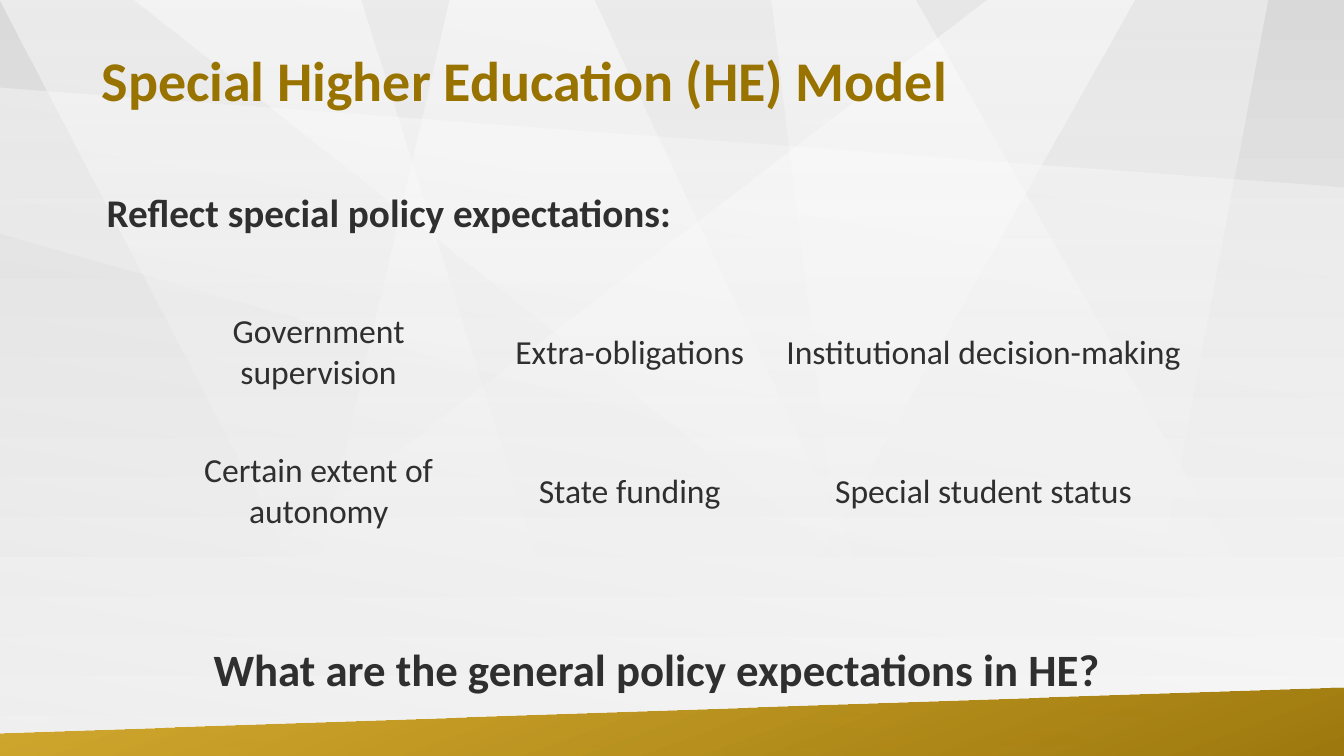
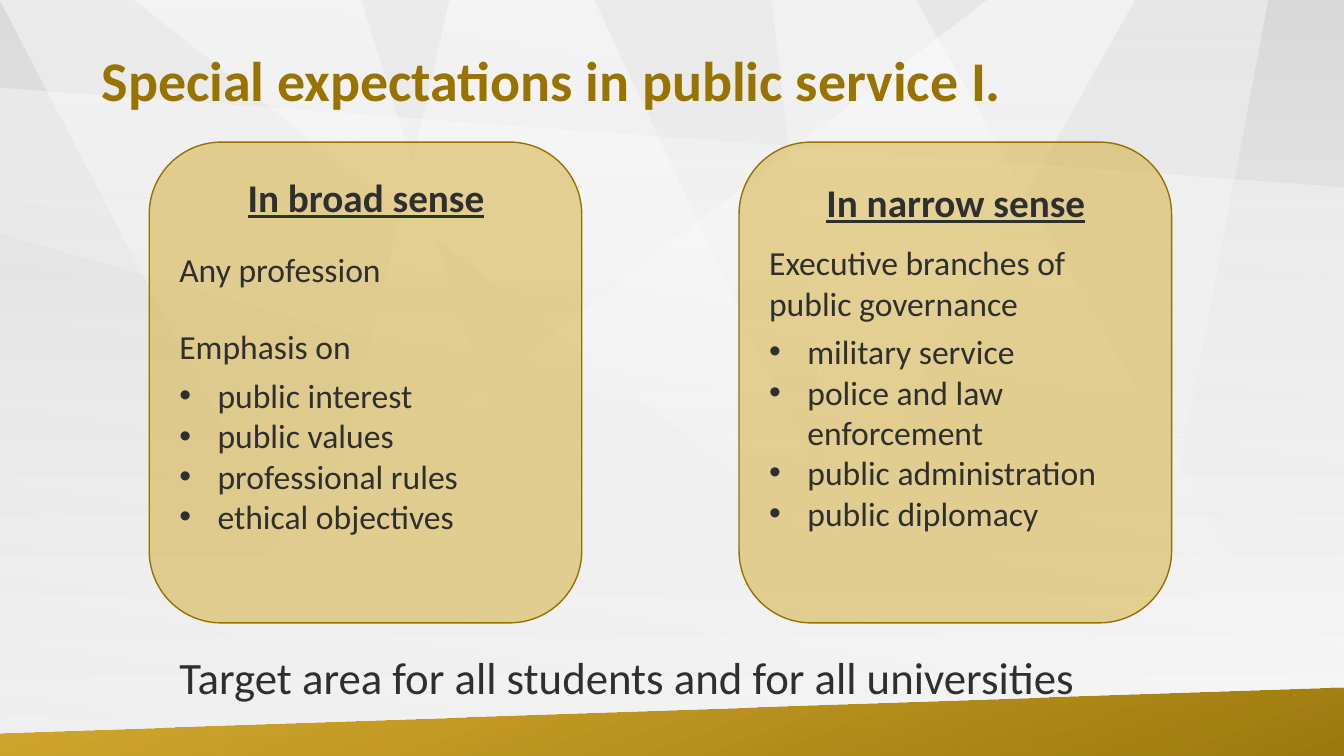
from dataclasses import dataclass
from typing import Optional

from lxml import etree
from pptx import Presentation
from pptx.dml.color import RGBColor
from pptx.enum.shapes import MSO_SHAPE
from pptx.enum.text import MSO_ANCHOR, PP_ALIGN
from pptx.oxml.ns import qn
from pptx.util import Pt

PX = 9144
WIDTH, HEIGHT = 1333, 750
FONT = "Calibri"
BLANK_LAYOUT = 6
NO_GRID_STYLE = "{2D5ABB26-0587-4C30-8999-92F81FD0307C}"

RECTANGLE = MSO_SHAPE.RECTANGLE
ROUNDED = MSO_SHAPE.ROUNDED_RECTANGLE
TOP, MIDDLE = MSO_ANCHOR.TOP, MSO_ANCHOR.MIDDLE
LEFT, CENTER = PP_ALIGN.LEFT, PP_ALIGN.CENTER

WHITE = RGBColor(0xFF, 0xFF, 0xFF)
PALE_GREY = RGBColor(0xD9, 0xD9, 0xD9)
GREY = RGBColor(0xBF, 0xBF, 0xBF)
INK = RGBColor(0x2F, 0x2F, 0x2F)
GOLD = RGBColor(0xCC, 0x99, 0x00)
DARK_GOLD = RGBColor(0x99, 0x72, 0x00)
TITLE_GOLD = RGBColor(0x99, 0x73, 0x00)
BORDER_GOLD = RGBColor(0x97, 0x71, 0x00)


@dataclass(frozen=True)
class Gradient:
    start: RGBColor
    start_alpha: int
    end: RGBColor
    end_alpha: int
    angle: int = 90


@dataclass(frozen=True)
class Facet:
    points: tuple[tuple[int, int], ...]
    gradient: Gradient


@dataclass(frozen=True)
class Line:
    text: str
    size: int = 24
    bold: bool = False
    underline: bool = False
    color: RGBColor = INK
    align: PP_ALIGN = LEFT
    spacing: Optional[float] = None
    before: int = 0
    after: int = 0
    bullet: bool = False


@dataclass(frozen=True)
class Panel:
    left: int
    text_top: int
    lines: tuple[Line, ...]


BACKGROUND = Gradient(PALE_GREY, 50, WHITE, 100)
BRIGHT = Gradient(WHITE, 50, WHITE, 0)
SOFT = Gradient(WHITE, 40, WHITE, 0)
SHADE = Gradient(GREY, 25, WHITE, 0, 280)
BAND = Facet(((0, 727), (1333, 682), (1333, 750), (0, 750)),
             Gradient(GOLD, 80, DARK_GOLD, 95, 70))
FACETS = (
    Facet(((979, 0), (0, 750), (701, 750), (1125, 0)), BRIGHT),
    Facet(((0, 0), (358, 0), (594, 750), (391, 750)), BRIGHT),
    Facet(((132, 0), (907, 0), (1333, 750), (1083, 750)), BRIGHT),
    Facet(((765, 0), (856, 750), (1115, 750), (1257, 0)), SOFT),
    Facet(((589, 0), (446, 0), (272, 750), (939, 750)), BRIGHT),
    Facet(((0, 87), (1333, 186), (1333, 610), (0, 232)), SOFT),
)

EXPECTATIONS = (
    ("Government supervision", "Extra-obligations", "Institutional decision-making"),
    ("Certain extent of autonomy", "State funding", "Special student status"),
)
COLUMN_WIDTHS = (334, 283, 419)
ROW_HEIGHT = 138


def heading(text: str) -> Line:
    return Line(text, 28, bold=True, underline=True, align=CENTER)


def bullets(*texts: str) -> tuple[Line, ...]:
    return tuple(Line(text, bullet=True) for text in texts)


PANELS = (
    Panel(148, 167, (
        heading("In broad sense"),
        Line("Any profession", spacing=1.5, before=6, after=6),
        Line("Emphasis on", spacing=1.5, before=6, after=6),
        *bullets("public interest", "public values", "professional rules",
                 "ethical objectives"),
    )),
    Panel(733, 172, (
        Line("In narrow sense", 28, bold=True, underline=True, align=CENTER, after=6),
        Line("Executive branches of public governance", before=6, after=6),
        *bullets("military service", "police and law enforcement",
                 "public administration", "public diplomacy"),
    )),
)


def add_alpha(color_element, percent: int) -> None:
    etree.SubElement(color_element, qn("a:alpha"), val=str(percent * 1000))


def paint_gradient(fill, root, gradient: Gradient) -> None:
    fill.gradient()
    element = next(root.iter(qn("a:gradFill")))
    for child in list(element):
        element.remove(child)
    stops = etree.SubElement(element, qn("a:gsLst"))
    for position, color, alpha in ((0, gradient.start, gradient.start_alpha),
                                   (100000, gradient.end, gradient.end_alpha)):
        stop = etree.SubElement(stops, qn("a:gs"), pos=str(position))
        add_alpha(etree.SubElement(stop, qn("a:srgbClr"), val=str(color)), alpha)
    etree.SubElement(element, qn("a:lin"), ang=str(gradient.angle * 60000), scaled="0")


def finish_gradient_shape(shape, gradient: Gradient) -> None:
    shape.shadow.inherit = False
    shape.line.fill.background()
    paint_gradient(shape.fill, shape.element.spPr, gradient)


def add_facet(page, facet: Facet) -> None:
    builder = page.shapes.build_freeform(*facet.points[0], scale=PX)
    builder.add_line_segments(facet.points[1:], close=True)
    finish_gradient_shape(builder.convert_to_shape(), facet.gradient)


def write_line(paragraph, line: Line) -> None:
    paragraph.text = line.text
    paragraph.alignment = line.align
    if line.spacing:
        paragraph.line_spacing = line.spacing
    paragraph.space_before = Pt(line.before)
    paragraph.space_after = Pt(line.after)
    if line.bullet:
        properties = paragraph._p.get_or_add_pPr()
        properties.set("marL", str(38 * PX))
        properties.set("indent", str(-38 * PX))
        etree.SubElement(properties, qn("a:buFont"), typeface="Arial")
        etree.SubElement(properties, qn("a:buChar"), char="•")
    for span in paragraph.runs:
        span.font.name = FONT
        span.font.size = Pt(line.size)
        span.font.bold = line.bold
        span.font.underline = line.underline
        span.font.color.rgb = line.color


def add_text(page, left: int, top: int, width: int, height: int,
             *lines: Line, anchor: MSO_ANCHOR = TOP) -> None:
    box = page.shapes.add_textbox(left * PX, top * PX, width * PX, height * PX)
    frame = box.text_frame
    frame.word_wrap = True
    frame.vertical_anchor = anchor
    for index, line in enumerate(lines):
        paragraph = frame.add_paragraph() if index else frame.paragraphs[0]
        write_line(paragraph, line)


def add_page(deck, title: str):
    page = deck.slides.add_slide(deck.slide_layouts[BLANK_LAYOUT])
    paint_gradient(page.background.fill, page.element, BACKGROUND)
    for facet in FACETS:
        add_facet(page, facet)
    shade = page.shapes.add_shape(RECTANGLE, 0, 0, WIDTH * PX, HEIGHT * PX)
    finish_gradient_shape(shade, SHADE)
    add_facet(page, BAND)
    add_text(page, 91, 10, 1150, 145,
             Line(title, 40, bold=True, color=TITLE_GOLD, spacing=0.9), anchor=MIDDLE)
    return page


def add_expectations(page) -> None:
    rows, columns = len(EXPECTATIONS), len(COLUMN_WIDTHS)
    table = page.shapes.add_table(rows, columns, 149 * PX, 281 * PX,
                                  sum(COLUMN_WIDTHS) * PX, rows * ROW_HEIGHT * PX).table
    table.first_row = False
    table.horz_banding = False
    next(table._tbl.iter(qn("a:tableStyleId"))).text = NO_GRID_STYLE
    for column, width in zip(table.columns, COLUMN_WIDTHS):
        column.width = width * PX
    for row, texts in zip(table.rows, EXPECTATIONS):
        row.height = ROW_HEIGHT * PX
        for cell, text in zip(row.cells, texts):
            cell.fill.background()
            cell.vertical_anchor = MIDDLE
            write_line(cell.text_frame.paragraphs[0], Line(text, align=CENTER))


def add_panel(page, panel: Panel) -> None:
    card = page.shapes.add_shape(ROUNDED, panel.left * PX, 141 * PX, 429 * PX, 477 * PX)
    card.shadow.inherit = False
    card.fill.solid()
    card.fill.fore_color.rgb = GOLD
    add_alpha(next(card.element.spPr.iter(qn("a:srgbClr"))), 40)
    card.line.color.rgb = BORDER_GOLD
    card.line.width = Pt(1)
    add_text(page, panel.left + 20, panel.text_top, 390, 370, *panel.lines)


def main() -> None:
    deck = Presentation()
    deck.slide_width, deck.slide_height = WIDTH * PX, HEIGHT * PX

    page = add_page(deck, "Special Higher Education (HE) Model")
    add_text(page, 96, 187, 1150, 60,
             Line("Reflect special policy expectations:", 28, bold=True, spacing=0.9))
    add_expectations(page)
    add_text(page, 202, 632, 1056, 64,
             Line("What are the general policy expectations in HE?", 32, bold=True))

    page = add_page(deck, "Special expectations in public service I.")
    for panel in PANELS:
        add_panel(page, panel)
    add_text(page, 168, 640, 997, 64,
             Line("Target area for all students and for all universities", 32))

    deck.save("out.pptx")


if __name__ == "__main__":
    main()
